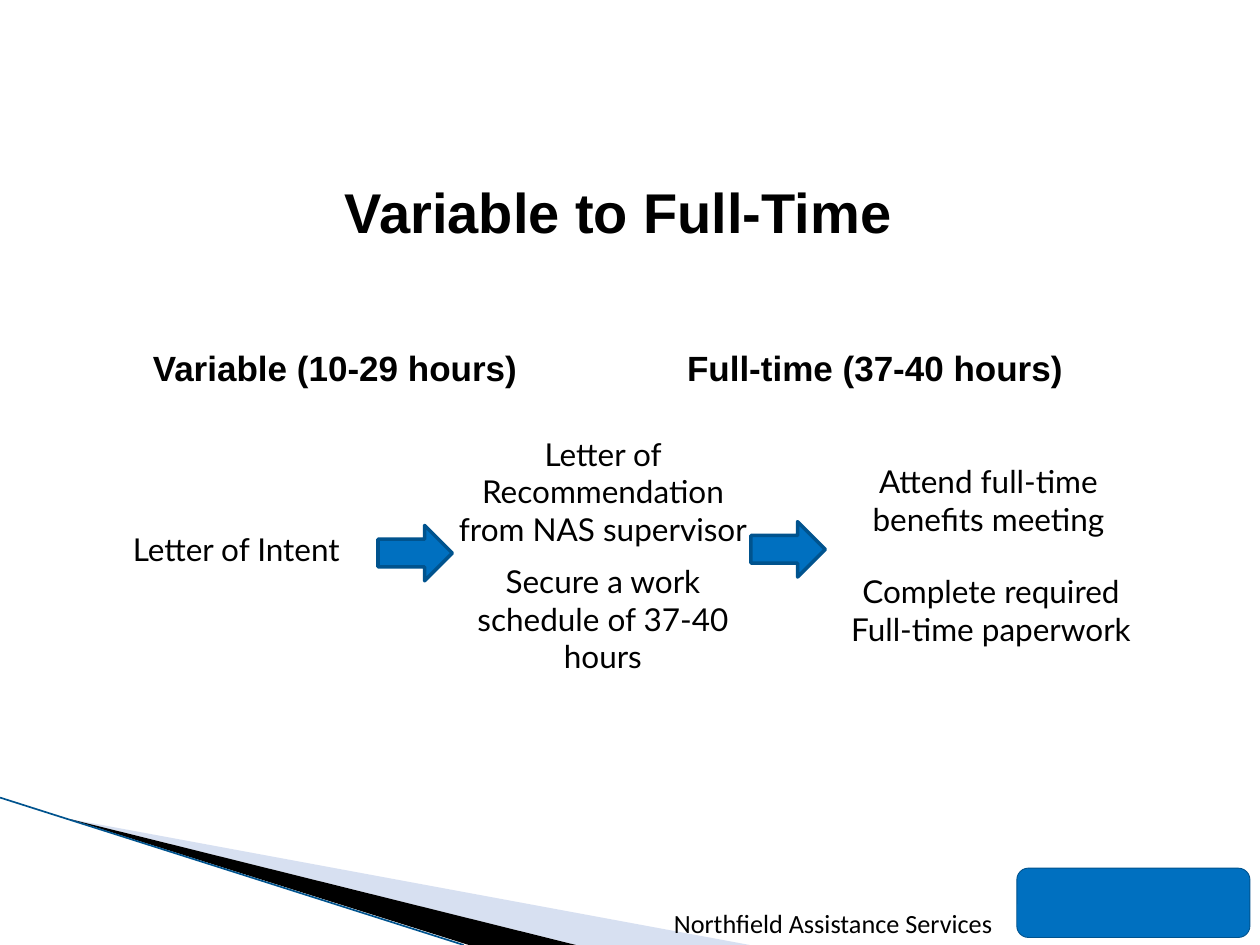
from dataclasses import dataclass

from lxml import etree
from pptx import Presentation
from pptx.dml.color import RGBColor
from pptx.enum.shapes import MSO_CONNECTOR, MSO_SHAPE
from pptx.enum.text import MSO_ANCHOR, MSO_AUTO_SIZE, PP_ALIGN
from pptx.oxml.ns import qn
from pptx.util import Inches, Pt

CENTER, LEFT = PP_ALIGN.CENTER, PP_ALIGN.LEFT
TOP, NO_AUTOFIT = MSO_ANCHOR.TOP, MSO_AUTO_SIZE.NONE
RIGHT_ARROW, ROUNDED = MSO_SHAPE.RIGHT_ARROW, MSO_SHAPE.ROUNDED_RECTANGLE
STRAIGHT = MSO_CONNECTOR.STRAIGHT

WIDTH, HEIGHT = 10, 7.5
STEP_WIDTH = 2.59
TITLE_ONLY = 5


@dataclass(frozen=True)
class Theme:
    text: RGBColor = RGBColor(0, 0, 0)
    blue: RGBColor = RGBColor(0x00, 0x70, 0xC0)
    dark_blue: RGBColor = RGBColor(0x00, 0x53, 0x8E)
    pale_blue: RGBColor = RGBColor(0x9D, 0xB2, 0xDD)
    heading_font: str = "Arial"
    step_font: str = "Lato"
    footer_font: str = "Calibri"
    title_size: int = 32
    heading_size: int = 20
    step_size: int = 18
    footer_size: int = 15


THEME = Theme()


def inches(box):
    return [Inches(value) for value in box]


def format_text(shape, text, font, size, bold=False, align=CENTER, wrap=True):
    frame = shape.text_frame
    frame.text = text
    frame.word_wrap = wrap
    frame.auto_size = NO_AUTOFIT
    frame.vertical_anchor = TOP
    paragraph = frame.paragraphs[0]
    paragraph.alignment = align
    paragraph.font.name = font
    paragraph.font.size = Pt(size)
    paragraph.font.bold = bold
    paragraph.font.color.rgb = THEME.text


def add_label(slide, box, text, font, size, **style):
    format_text(slide.shapes.add_textbox(*inches(box)), text, font, size, **style)


def add_block(slide, preset, box, line_width):
    shape = slide.shapes.add_shape(preset, *inches(box))
    shape.shadow.inherit = False
    shape.fill.solid()
    shape.fill.fore_color.rgb = THEME.blue
    shape.line.color.rgb = THEME.dark_blue
    shape.line.width = Pt(line_width)


def add_wedge(slide, corners, color, opacity=100):
    points = [(Inches(x), Inches(y)) for x, y in corners]
    builder = slide.shapes.build_freeform(*points[0])
    builder.add_line_segments(points[1:], close=True)
    wedge = builder.convert_to_shape()
    wedge.shadow.inherit = False
    wedge.fill.solid()
    wedge.fill.fore_color.rgb = color
    wedge.line.fill.background()
    color_element = wedge._element.spPr.find(qn("a:solidFill"))[0]
    etree.SubElement(color_element, qn("a:alpha"), val=str(opacity * 1000))


def add_corner_decoration(slide, left, top, bottom):
    """Two wedges that fan out from one tip, above a thin diagonal line."""
    tip = (left + 0.55, top + 0.17)
    inner, middle, outer = [(left + x, bottom) for x in (3.72, 4.57, 5.95)]
    add_wedge(slide, [tip, outer, middle], THEME.pale_blue, opacity=40)
    add_wedge(slide, [tip, middle, inner], THEME.text)
    line = slide.shapes.add_connector(
        STRAIGHT, *inches((left, top, left + 3.68, bottom)))
    line.line.color.rgb = THEME.dark_blue
    line.line.width = Pt(0.95)
    etree.SubElement(line._element.spPr, qn("a:effectLst"))


def add_title(slide, box):
    title = slide.shapes.title
    title.left, title.top, title.width, title.height = inches(box)
    format_text(title, "Variable to Full-Time", THEME.heading_font,
                THEME.title_size, bold=True)


def add_headings(slide, top):
    headings = [(1.08, 3.16, "Variable (10-29 hours)"),
                (5.3, 3.29, "Full-time (37-40 hours)")]
    for left, width, text in headings:
        add_label(slide, (left, top, width, 0.44), text, THEME.heading_font,
                  THEME.heading_size, bold=True, wrap=False)


def add_process(slide, left, top):
    """Three columns of steps with an arrow between each pair."""
    steps = [(0, 0.76, 0.4, "Letter of Intent"),
             (2.91, 0, 1.01, "Letter of Recommendation from NAS supervisor"),
             (2.91, 1.01, 1.01, "Secure a work schedule of 37-40 hours"),
             (5.97, 0.22, 0.71, "Attend full-time benefits meeting"),
             (5.99, 1.09, 0.71, "Complete required Full-time paperwork")]
    for x, y, height, text in steps:
        add_label(slide, (left + x, top + y, STEP_WIDTH, height), text,
                  THEME.step_font, THEME.step_size)
    for x, y in [(2.42, 0.77), (5.38, 0.74)]:
        add_block(slide, RIGHT_ARROW, (left + x, top + y, 0.59, 0.44), 2)


def add_footer(slide, left, top):
    add_block(slide, ROUNDED, (left + 2.82, top, 1.85, 0.55), 0.5)
    add_label(slide, (left, top + 0.26, 2.8, 0.35),
              "Northfield Assistance Services", THEME.footer_font,
              THEME.footer_size, align=LEFT, wrap=False)


def main():
    presentation = Presentation()
    presentation.slide_width, presentation.slide_height = inches((WIDTH, HEIGHT))
    slide = presentation.slides.add_slide(presentation.slide_layouts[TITLE_ONLY])
    add_corner_decoration(slide, 0, 6.33, HEIGHT)
    add_title(slide, (2.37, 1.36, 5.08, 0.64))
    add_headings(slide, 2.7)
    add_process(slide, 0.58, 3.4)
    add_footer(slide, 5.25, 6.89)
    presentation.save("out.pptx")


if __name__ == "__main__":
    main()
